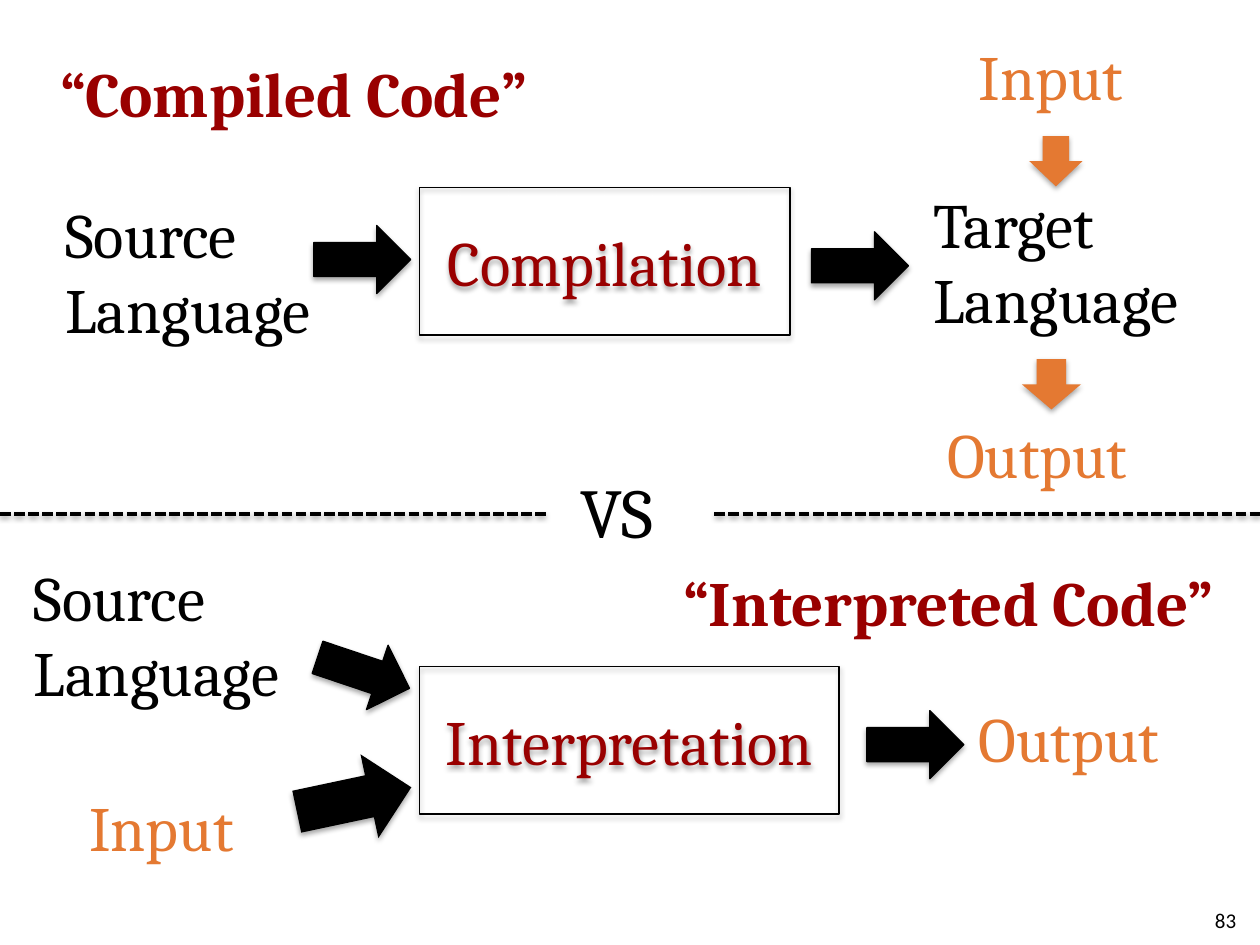
from pptx import Presentation
from pptx.dml.color import RGBColor
from pptx.enum.dml import MSO_LINE
from pptx.enum.shapes import MSO_CONNECTOR, MSO_SHAPE
from pptx.enum.text import MSO_ANCHOR, MSO_AUTO_SIZE, PP_ALIGN
from pptx.oxml import parse_xml
from pptx.oxml.ns import nsdecls
from pptx.util import Inches, Pt

RECT = MSO_SHAPE.RECTANGLE
RIGHT = MSO_SHAPE.RIGHT_ARROW
DOWN = MSO_SHAPE.DOWN_ARROW
STRAIGHT = MSO_CONNECTOR.STRAIGHT
DASH = MSO_LINE.SQUARE_DOT
MIDDLE = MSO_ANCHOR.MIDDLE
FIT = MSO_AUTO_SIZE.SHAPE_TO_FIT_TEXT
CENTER = PP_ALIGN.CENTER
ALIGN_RIGHT = PP_ALIGN.RIGHT

BLACK, RED, ORANGE = "000000", "990000", "E47932"
BODY = {"name": "Cambria", "size": Pt(36)}
TITLE = {**BODY, "bold": True}
VERSUS = {**BODY, "size": Pt(40)}
NUMBER = {"name": "Calibri", "size": Pt(12)}
ARROW_W, ARROW_H = 0.77, 0.54


def rgb(value):
    return RGBColor.from_string(value)


def place(box, left, top, width, height):
    return [Inches(v) for v in (box[0] + left, box[1] + top, width, height)]


def add_shadow(sp, alpha=35, dist=1.8):
    sp._element.spPr.append(parse_xml(
        f'<a:effectLst {nsdecls("a")}><a:outerShdw blurRad="{Pt(3.1)}" '
        f'dist="{Pt(dist)}" dir="5400000" rotWithShape="0">'
        f'<a:srgbClr val="{BLACK}"><a:alpha val="{alpha * 1000}"/></a:srgbClr>'
        '</a:outerShdw></a:effectLst>'))


def write(tf, text, color, fmt, align=None):
    p = tf.paragraphs[0]
    p.text = text
    p.alignment = align
    for r in p.runs:
        for key, value in fmt.items():
            setattr(r.font, key, value)
        r.font.color.rgb = rgb(color)


def add_label(s, area, text, color=BLACK, fmt=BODY, wrap=False):
    tf = s.shapes.add_textbox(*area).text_frame
    tf.word_wrap = wrap
    tf.auto_size = FIT
    write(tf, text, color, fmt)


def add_arrow(s, area, kind=RIGHT, color=BLACK, outlined=True, rotation=0):
    sp = s.shapes.add_shape(kind, *area)
    sp.rotation = rotation
    sp.fill.solid()
    sp.fill.fore_color.rgb = rgb(color)
    if outlined:
        sp.line.color.rgb = rgb(color)
        sp.line.width = Pt(0.75)
    else:
        sp.line.fill.background()
    add_shadow(sp)


def add_process(s, area, text):
    sp = s.shapes.add_shape(RECT, *area)
    sp.fill.background()
    sp.line.color.rgb = rgb(BLACK)
    sp.line.width = Pt(0.75)
    add_shadow(sp)
    sp.text_frame.vertical_anchor = MIDDLE
    sp.text_frame.word_wrap = True
    write(sp.text_frame, text, RED, BODY, CENTER)


def add_compiled(s, box):
    add_process(s, place(box, 3.33, 1.49, 2.94, 1.17), "Compilation")
    add_label(s, place(box, 0.42, 1.5, 2.27, 1.31), "Source \vLanguage")
    add_label(s, place(box, 7.31, 1.42, 2.27, 1.31), "Target\vLanguage")
    for left, top in ((2.49, 1.79), (6.44, 1.84)):
        add_arrow(s, place(box, left, top, ARROW_W, ARROW_H))
    add_label(s, place(box, 7.67, 0.25, 1.67, 0.71), "Input", ORANGE, wrap=True)
    add_label(s, place(box, 7.42, 3.25, 1.83, 0.71), "Output", ORANGE, wrap=True)
    for left, top, width in ((8.17, 1.08, 0.42), (8.11, 2.85, 0.47)):
        add_arrow(s, place(box, left, top, width, 0.4), DOWN, ORANGE, False)
    add_label(s, place(box, 0.38, 0.38, 4.07, 0.71), "“Compiled Code”", RED, TITLE)


def add_divider(s, box):
    add_label(s, place(box, 4.51, 0, 0.82, 0.77), "VS", fmt=VERSUS)
    for left in (0, 5.67):
        x, y, width, _ = place(box, left, 0.41, 4.33, 0)
        line = s.shapes.add_connector(STRAIGHT, x, y, x + width, y)
        line.line.color.rgb = rgb(BLACK)
        line.line.width = Pt(2)
        line.line.dash_style = DASH
        add_shadow(line, 38, 1.6)


def add_interpreted(s, box):
    add_process(s, place(box, 3.33, 1.29, 3.33, 1.17), "Interpretation")
    add_label(s, place(box, 0.17, 0.38, 2.27, 1.31), "Source \vLanguage")
    add_label(s, place(box, 0.61, 2.21, 1.67, 0.71), "Input", ORANGE, wrap=True)
    add_arrow(s, place(box, 2.47, 1.88, 0.68, 0.93), DOWN, outlined=False, rotation=258)
    add_arrow(s, place(box, 2.5, 1.07, ARROW_W, ARROW_H), rotation=18.6)
    add_label(s, place(box, 7.67, 1.5, 1.83, 0.71), "Output", ORANGE, wrap=True)
    add_arrow(s, place(box, 6.88, 1.64, ARROW_W, ARROW_H))
    add_label(s, place(box, 5.33, 0.42, 4.6, 0.71), "“Interpreted Code”", RED, TITLE)


def add_page_number(s, box):
    tf = s.shapes.add_textbox(*place(box, 0, 0, 2.33, 0.4)).text_frame
    tf.word_wrap = True
    tf.vertical_anchor = MIDDLE
    write(tf, "83", BLACK, NUMBER, ALIGN_RIGHT)


def main():
    prs = Presentation()
    prs.slide_width, prs.slide_height = Inches(10), Inches(7.5)
    s = prs.slides.add_slide(prs.slide_layouts[6])
    add_page_number(s, (7.58, 7.1))
    add_compiled(s, (0, 0))
    add_divider(s, (0, 3.67))
    add_interpreted(s, (0, 4))
    prs.save("out.pptx")


if __name__ == "__main__":
    main()
